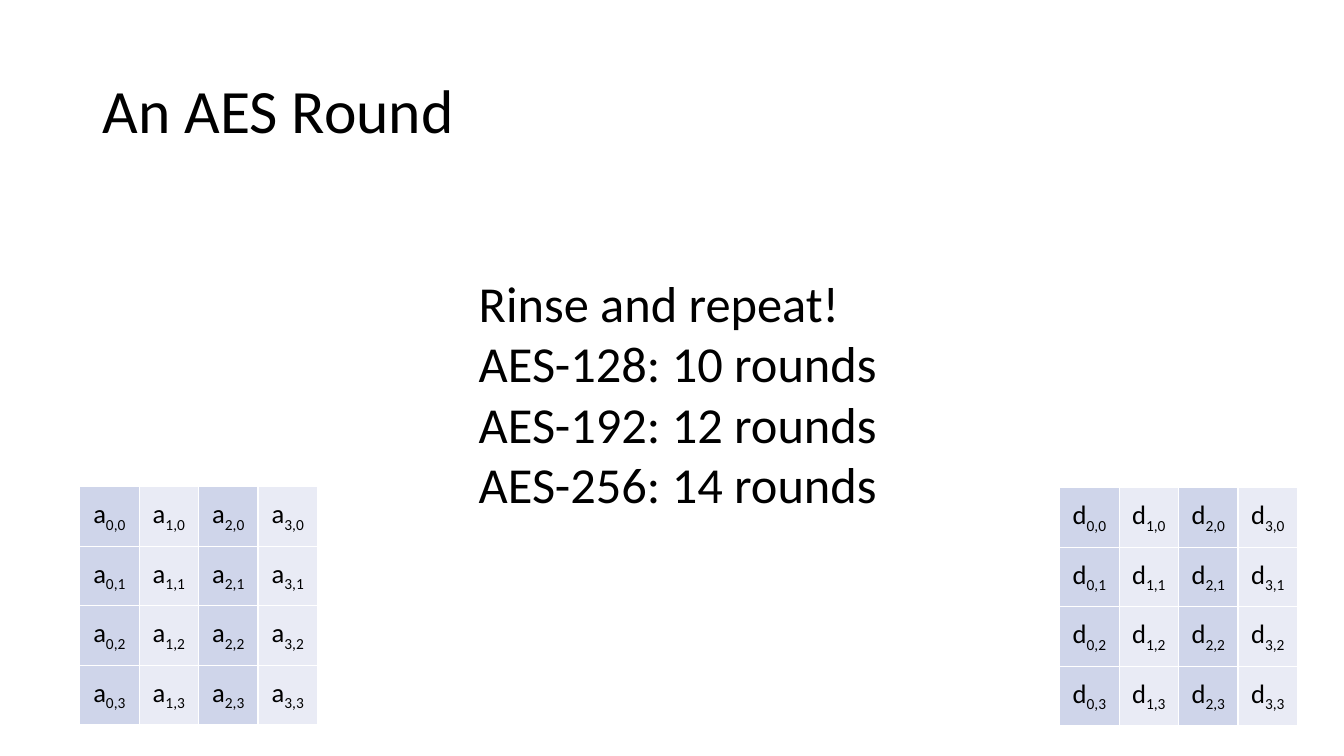
from dataclasses import dataclass
from itertools import product

from lxml import etree
from pptx import Presentation
from pptx.dml.color import RGBColor
from pptx.enum.text import MSO_ANCHOR, PP_ALIGN
from pptx.oxml.ns import qn
from pptx.slide import Slide
from pptx.table import _Cell
from pptx.text.text import TextFrame
from pptx.util import Inches, Pt

MIDDLE, TOP = MSO_ANCHOR.MIDDLE, MSO_ANCHOR.TOP
CENTER, LEFT = PP_ALIGN.CENTER, PP_ALIGN.LEFT


@dataclass(frozen=True)
class Theme:
    font: str = "Calibri"
    ink: str = "000000"
    rule: str = "FFFFFF"
    bands: tuple[str, str] = ("CFD5EA", "E9EBF5")
    title: int = 44
    body: int = 36
    cell: int = 19
    rule_width: int = 1


@dataclass(frozen=True)
class Box:
    lines: tuple[str, ...]
    left: float
    top: float
    width: float
    height: float
    size: int
    anchor: MSO_ANCHOR = TOP
    spacing: float = 1.0


@dataclass(frozen=True)
class State:
    letter: str
    left: float
    top: float


THEME = Theme()
COUNT = 4
SIDE = 0.59

BOXES = (
    Box(("An AES Round",), 0.92, 0.4, 11.5, 1.45, THEME.title, MIDDLE, 0.9),
    Box(
        ("Rinse and repeat!", "AES-128: 10 rounds", "AES-192: 12 rounds", "AES-256: 14 rounds"),
        4.65, 2.65, 6.03, 3.13, THEME.body,
    ),
)
STATES = (State("d", 10.51, 4.84), State("a", 0.79, 4.83))


def write(frame: TextFrame, lines: tuple[str, ...], *, size: int, sub: str = "",
          align: PP_ALIGN = LEFT, spacing: float = 1.0) -> None:
    for index, line in enumerate(lines):
        para = frame.add_paragraph() if index else frame.paragraphs[0]
        para.alignment = align
        para.line_spacing = spacing
        for text, base in ((line, 0), (sub, -25000)):
            if not text:
                continue
            run = para.add_run()
            run.text = text
            run.font.name = THEME.font
            run.font.size = Pt(size)
            run.font.color.rgb = RGBColor.from_string(THEME.ink)
            if base:
                run.font._element.set("baseline", str(base))


def draw_box(slide: Slide, box: Box) -> None:
    shape = slide.shapes.add_textbox(
        Inches(box.left), Inches(box.top), Inches(box.width), Inches(box.height)
    )
    frame = shape.text_frame
    frame.word_wrap = True
    frame.vertical_anchor = box.anchor
    write(frame, box.lines, size=box.size, spacing=box.spacing)


def add_rules(cell: _Cell) -> None:
    props = cell._tc.get_or_add_tcPr()
    for tag in ("a:lnL", "a:lnR", "a:lnT", "a:lnB"):
        line = etree.SubElement(props, qn(tag), w=str(Pt(THEME.rule_width)))
        fill = etree.SubElement(line, qn("a:solidFill"))
        etree.SubElement(fill, qn("a:srgbClr"), val=THEME.rule)


def draw_state(slide: Slide, state: State) -> None:
    extent = Inches(COUNT * SIDE)
    table = slide.shapes.add_table(
        COUNT, COUNT, Inches(state.left), Inches(state.top), extent, extent
    ).table
    table.first_row = False
    table.horz_banding = False
    table.vert_banding = True
    for index in range(COUNT):
        table.columns[index].width = Inches(SIDE)
        table.rows[index].height = Inches(SIDE)
    for row, col in product(range(COUNT), repeat=2):
        cell = table.cell(row, col)
        cell.vertical_anchor = MIDDLE
        cell.margin_left = cell.margin_right = Inches(0.1)
        cell.margin_top = cell.margin_bottom = Inches(0.05)
        add_rules(cell)
        cell.fill.solid()
        cell.fill.fore_color.rgb = RGBColor.from_string(THEME.bands[col % 2])
        write(cell.text_frame, (state.letter,), size=THEME.cell,
              sub=f"{col},{row}", align=CENTER)


def main() -> None:
    deck = Presentation()
    deck.slide_width = Inches(13.33)
    deck.slide_height = Inches(7.5)
    slide = deck.slides.add_slide(deck.slide_layouts[6])
    for state in STATES:
        draw_state(slide, state)
    for box in BOXES:
        draw_box(slide, box)
    deck.save("out.pptx")


if __name__ == "__main__":
    main()
